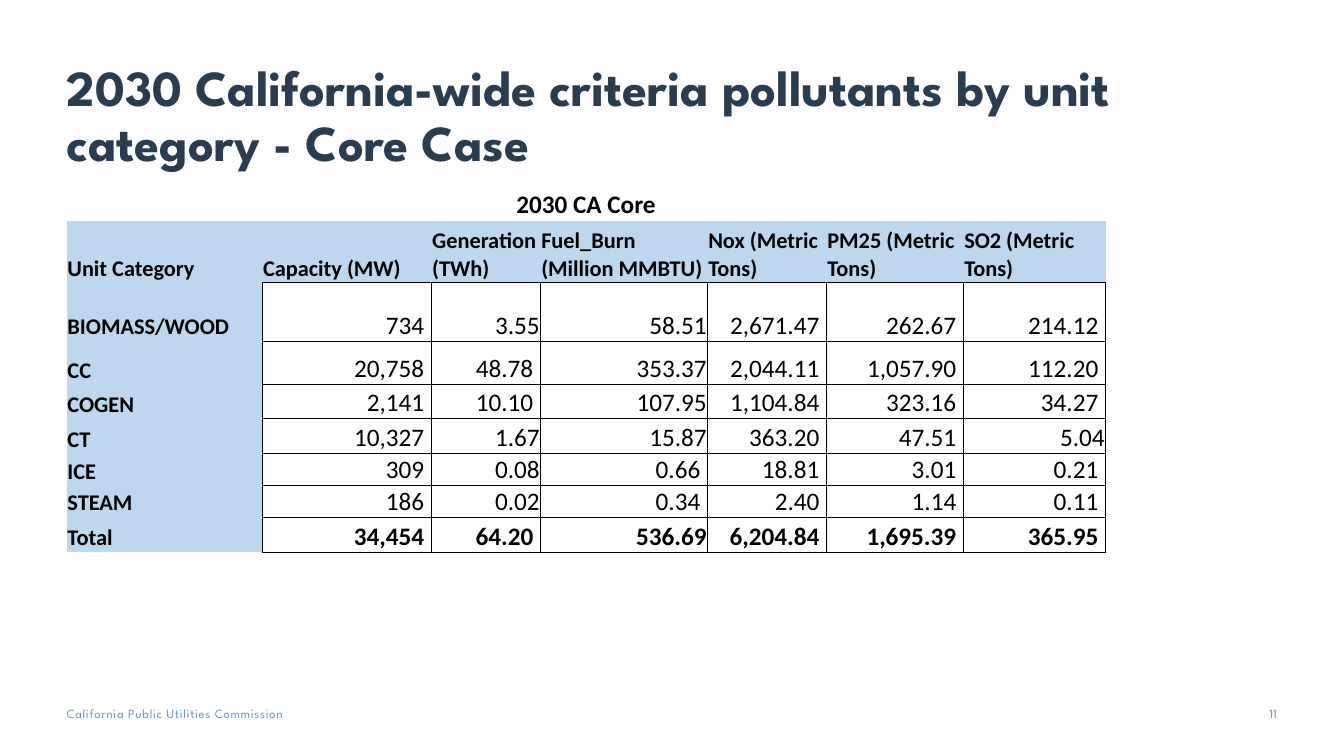
import pptx
import pptx.util
import pptx.dml.color
import pptx.enum.text
import pptx.oxml
import pptx.oxml.ns

Cm = pptx.util.Cm
Pt = pptx.util.Pt
RGBColor = pptx.dml.color.RGBColor
Align = pptx.enum.text.PP_ALIGN
Anchor = pptx.enum.text.MSO_ANCHOR
qn = pptx.oxml.ns.qn

TITLE = "2030 California-wide criteria pollutants by unit category - Core Case"
FOOTER = "California Public Utilities Commission"
PAGE_NUMBER = "11"
CAPTION = "2030 CA Core"
HEADER = ["Unit Category", "Capacity (MW)", "Generation (TWh)", "Fuel_Burn (Million MMBTU)",
          "Nox (Metric Tons)", "PM25 (Metric Tons)", "SO2 (Metric Tons)"]
UNITS = [
    ["BIOMASS/WOOD", "734", "3.55", "58.51", "2,671.47", "262.67", "214.12"],
    ["CC", "20,758", "48.78", "353.37", "2,044.11", "1,057.90", "112.20"],
    ["COGEN", "2,141", "10.10", "107.95", "1,104.84", "323.16", "34.27"],
    ["CT", "10,327", "1.67", "15.87", "363.20", "47.51", "5.04"],
    ["ICE", "309", "0.08", "0.66", "18.81", "3.01", "0.21"],
    ["STEAM", "186", "0.02", "0.34", "2.40", "1.14", "0.11"],
    ["Total", "34,454", "64.20", "536.69", "6,204.84", "1,695.39", "365.95"],
]
FLUSH_VALUES = {"3.55", "1.67", "0.08", "0.02", "58.51", "353.37", "107.95", "15.87",
                "536.69", "5.04"}
COLUMN_WIDTHS = [4.93, 4.26, 2.75, 4.21, 3, 3.45, 3.58]
ROW_HEIGHTS = [0.86, 1.55, 1.48, 1.09, 0.86, 0.88, 0.81, 0.79, 0.88]

HEADING_FONT = "League Spartan"
TABLE_FONT = "Calibri"
PLAIN_TABLE_STYLE = "{2D5ABB26-0587-4C30-8999-92F81FD0307C}"
NAVY = RGBColor(0x2A, 0x3C, 0x50)
STEEL = RGBColor(0x69, 0x96, 0xC9)
SKY = RGBColor(0xBD, 0xD7, 0xEE)
BLACK = RGBColor(0, 0, 0)
LEFT = 1.68


def set_font(paragraph, name, size, color, bold=False):
    font = paragraph.font
    font.name, font.size, font.bold = name, Pt(size), bold
    font.color.rgb = color


def set_insets(frame, left, top, right, bottom):
    frame.margin_left, frame.margin_top = Cm(left), Cm(top)
    frame.margin_right, frame.margin_bottom = Cm(right), Cm(bottom)


def add_title(page):
    title = page.shapes.title
    title.left, title.top, title.width, title.height = Cm(LEFT), Cm(0.94), Cm(30.5), Cm(3.53)
    frame = title.text_frame
    frame.text = TITLE
    frame.word_wrap = True
    frame.auto_size = pptx.enum.text.MSO_AUTO_SIZE.NONE
    frame.vertical_anchor = Anchor.BOTTOM
    set_insets(frame, 0, 0.13, 0.25, 0.13)
    para = frame.paragraphs[0]
    para.alignment = Align.LEFT
    para.line_spacing = 0.9
    set_font(para, HEADING_FONT, 36, NAVY, True)


def add_small_text(page, text, left, width, align, spacing):
    box = page.shapes.add_textbox(Cm(left), Cm(17.78), Cm(width), Cm(0.4))
    frame = box.text_frame
    frame.word_wrap = True
    set_insets(frame, 0, 0, 0, 0)
    para = frame.paragraphs[0]
    para.alignment = align
    span = para.add_run()
    span.text = text
    set_font(para, HEADING_FONT, 9, STEEL)
    span.font._element.set("spc", str(spacing))


def add_borders(cell):
    properties = cell._tc.get_or_add_tcPr()
    for side in ("lnL", "lnR", "lnT", "lnB"):
        properties.append(pptx.oxml.parse_xml(
            f'<a:{side} xmlns:a="http://schemas.openxmlformats.org/drawingml/2006/main" '
            f'w="{Pt(0.5)}"><a:solidFill><a:srgbClr val="{BLACK}"/></a:solidFill></a:{side}>'))


def fill_cell(cell, text, size, align, bold, fill=None, right=0.02):
    cell.text = text
    cell.vertical_anchor = Anchor.BOTTOM
    set_insets(cell, 0.02, 0.02, right, 0)
    para = cell.text_frame.paragraphs[0]
    para.alignment = align
    set_font(para, TABLE_FONT, size, BLACK, bold)
    if fill is None:
        cell.fill.background()
    else:
        cell.fill.solid()
        cell.fill.fore_color.rgb = fill


def add_pollutant_table(page):
    frame = page.shapes.add_table(len(ROW_HEIGHTS), len(COLUMN_WIDTHS), Cm(LEFT), Cm(4.7),
                                  Cm(sum(COLUMN_WIDTHS)), Cm(sum(ROW_HEIGHTS)))
    table = frame.table
    table.first_row = table.horz_banding = False
    table._tbl.tblPr.find(qn("a:tableStyleId")).text = PLAIN_TABLE_STYLE
    for column, width in zip(table.columns, COLUMN_WIDTHS):
        column.width = Cm(width)
    for row, height in zip(table.rows, ROW_HEIGHTS):
        row.height = Cm(height)

    table.cell(0, 0).merge(table.cell(0, len(HEADER) - 1))
    fill_cell(table.cell(0, 0), CAPTION, 18, Align.CENTER, True)
    for row, values in enumerate([HEADER] + UNITS, 1):
        for column, text in enumerate(values):
            cell = table.cell(row, column)
            if row == 1 or column == 0:
                fill_cell(cell, text, 16, Align.LEFT, True, SKY)
            else:
                add_borders(cell)
                right = 0.02 if text in FLUSH_VALUES else 0.18
                fill_cell(cell, text, 18, Align.RIGHT, values[0] == "Total", right=right)


def main():
    deck = pptx.Presentation()
    deck.slide_width, deck.slide_height = Cm(33.87), Cm(19.05)
    page = deck.slides.add_slide(deck.slide_layouts[5])
    add_title(page)
    add_pollutant_table(page)
    add_small_text(page, FOOTER, LEFT, 8.15, Align.LEFT, 50)
    add_small_text(page, PAGE_NUMBER, 31.12, 1.06, Align.RIGHT, 0)
    deck.save("out.pptx")


if __name__ == "__main__":
    main()
